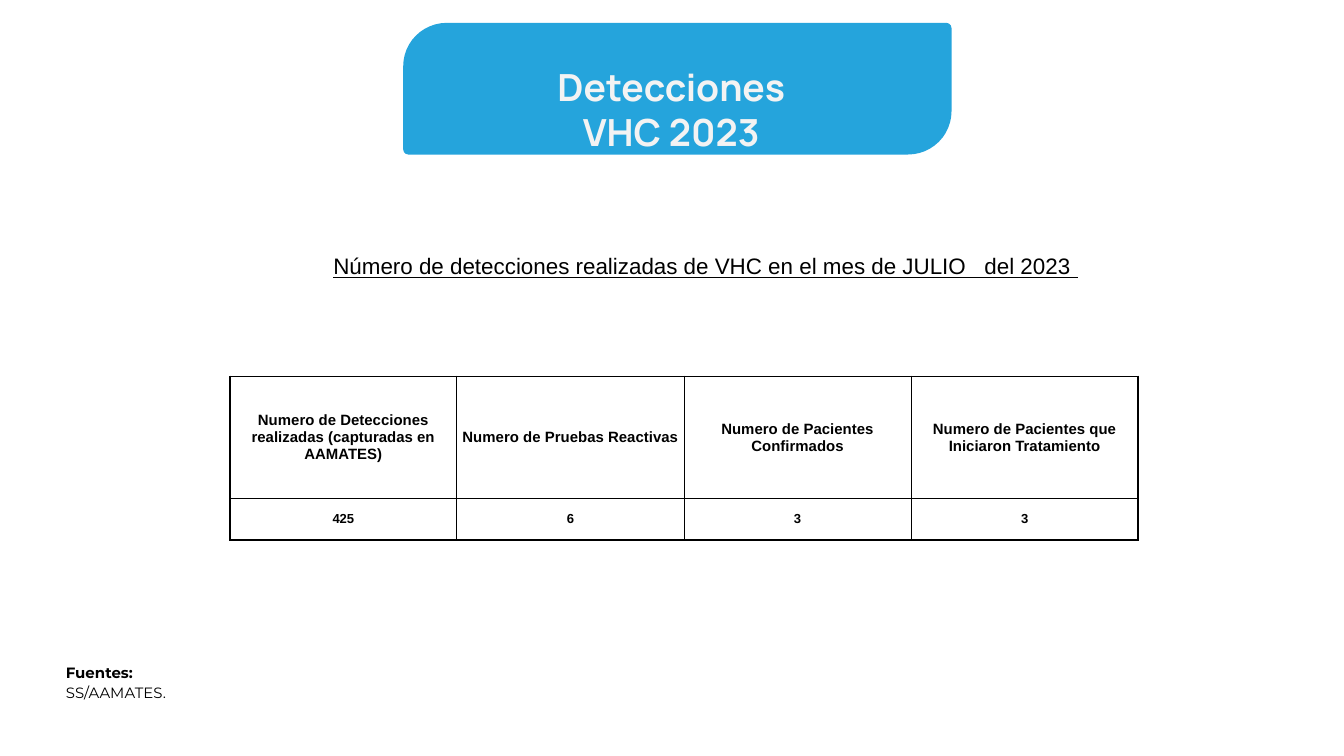
from lxml import etree
from pptx import Presentation
from pptx.dml.color import RGBColor
from pptx.enum.shapes import MSO_SHAPE
from pptx.enum.text import MSO_ANCHOR, PP_ALIGN
from pptx.oxml.ns import qn
from pptx.util import Inches, Pt

BANNER = MSO_SHAPE.ROUND_2_DIAG_RECTANGLE
CENTER, LEFT = PP_ALIGN.CENTER, PP_ALIGN.LEFT
TOP, MIDDLE, BOTTOM = MSO_ANCHOR.TOP, MSO_ANCHOR.MIDDLE, MSO_ANCHOR.BOTTOM


def color(value):
    return RGBColor.from_string(value)


class SlideBuilder:
    blue, black, white, pale = "25A4DC", "000000", "FFFFFF", "F3F3F3"
    title_font, body_font, source_font = "Manrope", "Arial", "Montserrat"

    def __init__(self, slide):
        self.slide = slide

    def style(self, paragraph, font, size, ink, bold=False, underline=False, align=CENTER):
        paragraph.alignment = align
        paragraph.font.name = font
        paragraph.font.size = Pt(size)
        paragraph.font.bold = bold
        paragraph.font.underline = underline
        paragraph.font.color.rgb = color(ink)

    def banner(self, left, top, width, height):
        banner = self.slide.shapes.add_shape(
            BANNER, Inches(left), Inches(top), Inches(width), Inches(height))
        banner.adjustments[0] = 0.33
        banner.adjustments[1] = 0.04
        banner.shadow.inherit = False
        banner.fill.solid()
        banner.fill.fore_color.rgb = color(self.blue)
        banner.line.fill.background()

    def text(self, left, top, width, height, lines, font, size, ink, inset=0.05, **look):
        frame = self.slide.shapes.add_textbox(
            Inches(left), Inches(top), Inches(width), Inches(height)).text_frame
        frame.word_wrap = True
        frame.margin_top = frame.margin_bottom = Inches(inset)
        frame.text = "\n".join(lines)
        for paragraph in frame.paragraphs:
            self.style(paragraph, font, size, ink, **look)

    def table(self, left, top, widths, heights):
        table = self.slide.shapes.add_table(
            len(heights), len(widths), Inches(left), Inches(top),
            Inches(sum(widths)), Inches(sum(heights))).table
        table.first_row = table.horz_banding = False
        for column, width in zip(table.columns, widths):
            column.width = Inches(width)
        for row, height in zip(table.rows, heights):
            row.height = Inches(height)
        return table

    def cell(self, cell, words, font, size, anchor, inset=0, **look):
        cell.text = words
        cell.vertical_anchor = anchor
        cell.margin_left = cell.margin_right = cell.margin_top = Inches(inset)
        cell.margin_bottom = 0
        self.style(cell.text_frame.paragraphs[0], font, size, self.black, **look)

    def cell_frame(self, cell, borders):
        properties = cell._tc.get_or_add_tcPr()
        for side, points in borders.items():
            line = etree.SubElement(properties, qn(f"a:{side}"), w=str(Pt(points)))
            if points:
                fill = etree.SubElement(line, qn("a:solidFill"))
                etree.SubElement(fill, qn("a:srgbClr"), val=self.black)
            else:
                etree.SubElement(line, qn("a:noFill"))
        cell.fill.solid()
        cell.fill.fore_color.rgb = color(self.white)

    def sources(self, left, top, widths, heights, heading, source):
        table = self.table(left, top, widths, heights)
        table.cell(1, 0).merge(table.cell(1, len(widths) - 1))
        for r, (words, anchor) in enumerate(((heading, BOTTOM), (source, TOP))):
            for c in range(len(widths)):
                cell = table.cell(r, c)
                self.cell(cell, words if c == 0 else "", self.source_font, 8, anchor,
                          inset=0.01, bold=r == 0, align=LEFT)
                self.cell_frame(cell, dict.fromkeys(("lnL", "lnR", "lnT", "lnB"), 0))

    def figures(self, left, top, column_width, heights, figures):
        table = self.table(left, top, [column_width] * len(figures), heights)
        last = len(figures) - 1
        for c, (heading, count) in enumerate(figures):
            for r, (words, size) in enumerate(((heading, 8), (count, 7))):
                cell = table.cell(r, c)
                self.cell(cell, words, self.body_font, size, MIDDLE, bold=True)
                self.cell_frame(cell, {
                    "lnL": 1 if c == 0 else 0.5,
                    "lnR": 1 if c == last else 0.5,
                    "lnT": 1 if r == 0 else 0.5,
                    "lnB": 1 if r == 1 else 0.5,
                })


def main():
    deck = Presentation()
    deck.slide_width = Inches(10)
    deck.slide_height = deck.slide_width * 9 // 16
    page = SlideBuilder(deck.slides.add_slide(deck.slide_layouts[6]))

    page.banner(3, 0.17, 4.08, 0.98)
    page.text(2.62, 0.38, 4.75, 0.88, ["Detecciones", "VHC 2023"],
              page.title_font, 20, page.pale, inset=0.1, bold=True)
    page.text(1.09, 1.83, 8.32, 0.3,
              ["Número de detecciones realizadas de VHC en el mes de JULIO   del 2023 "],
              page.body_font, 12, page.black, underline=True)
    page.sources(0.48, 4.9, [0.75, 0.73, 0.73, 0.28, 0.81], [0.18, 0.41],
                 "Fuentes:", "SS/AAMATES.")
    page.figures(1.71, 2.8, 1.69, [0.91, 0.31], [
        ("Numero de Detecciones realizadas (capturadas en AAMATES)", "425"),
        ("Numero de Pruebas Reactivas", "6"),
        ("Numero de Pacientes Confirmados", "3"),
        ("Numero de Pacientes que Iniciaron Tratamiento", "3"),
    ])
    deck.save("out.pptx")


if __name__ == "__main__":
    main()
